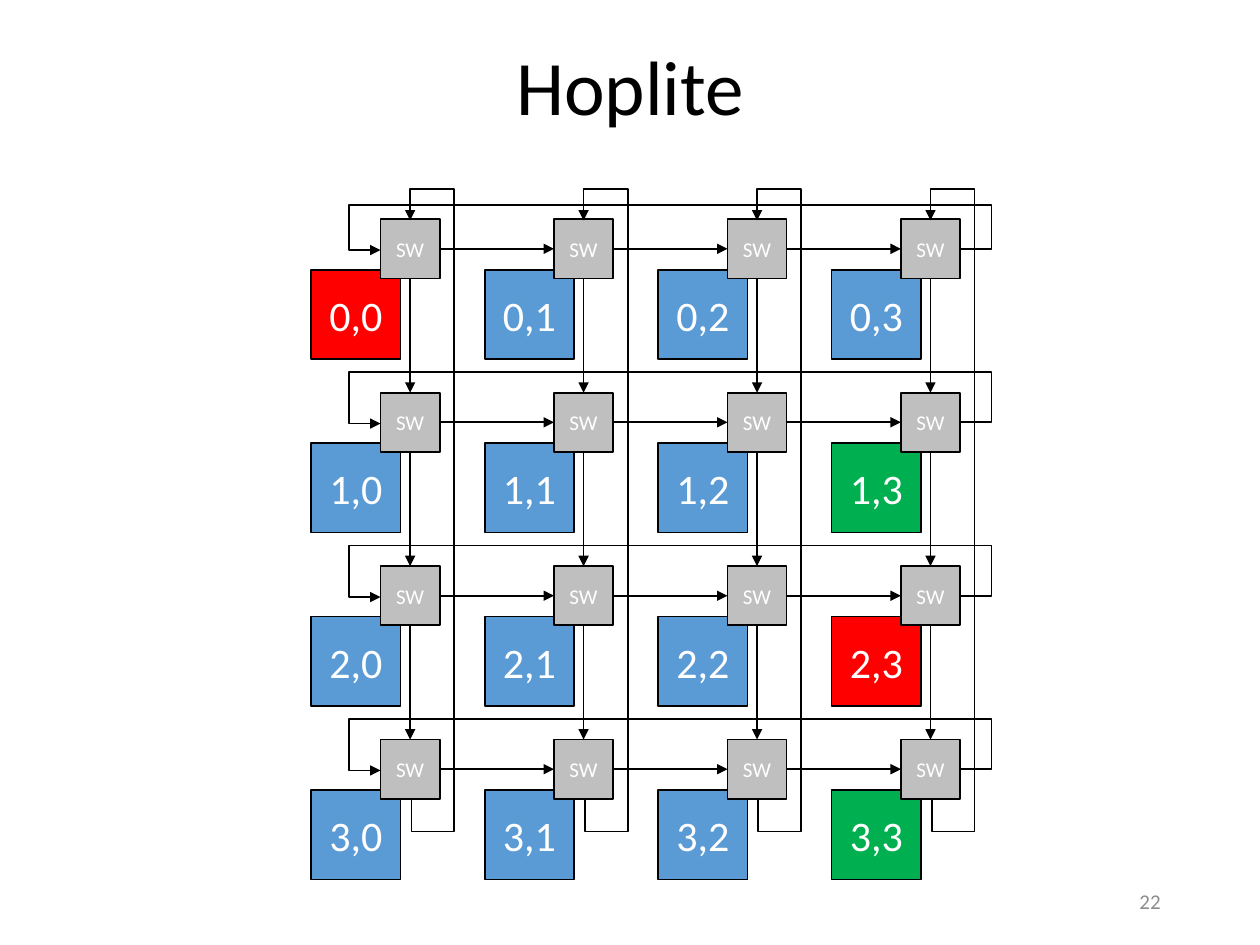
import pptx
import pptx.util
import pptx.dml.color
import pptx.enum.shapes
import pptx.enum.text
import pptx.oxml.ns
import lxml.etree

Inches = pptx.util.Inches
COLORS = {
    "black": "000000", "white": "FFFFFF", "number": "8C8C8C",
    "switch": "BFBFBF", "tile": "5B9BD5", "red": "FF0000", "green": "00B050",
}
ALIGN = pptx.enum.text.PP_ALIGN
RECTANGLE = pptx.enum.shapes.MSO_SHAPE.RECTANGLE
STRAIGHT = pptx.enum.shapes.MSO_CONNECTOR.STRAIGHT
TOP, LEFT, BOTTOM, RIGHT = range(4)


def write(shape, text, size, color, align=ALIGN.CENTER):
    frame = shape.text_frame
    frame.text = text
    frame.word_wrap = True
    frame.vertical_anchor = pptx.enum.text.MSO_ANCHOR.MIDDLE
    paragraph = frame.paragraphs[0]
    paragraph.alignment = align
    font = paragraph.runs[0].font
    font.name = "Calibri"
    font.size = pptx.util.Pt(size)
    font.color.rgb = pptx.dml.color.RGBColor.from_string(COLORS[color])


def outline(shape, arrow=False):
    shape.line.color.rgb = pptx.dml.color.RGBColor.from_string(COLORS["black"])
    shape.line.width = pptx.util.Pt(1)
    if arrow:
        qn = pptx.oxml.ns.qn
        lxml.etree.SubElement(shape.line._get_or_add_ln(), qn("a:tailEnd"), type="triangle")
        properties = shape._element.spPr
        if properties.find(qn("a:effectLst")) is None:
            lxml.etree.SubElement(properties, qn("a:effectLst"))


deck = pptx.Presentation()
deck.slide_width, deck.slide_height = Inches(10), Inches(7.5)
slide = deck.slides.add_slide(deck.slide_layouts[6])
shapes = slide.shapes

# Title and slide number
title = shapes.add_textbox(0, Inches(-0.01), Inches(10), Inches(1.45))
write(title, "Hoplite", 44, "black")
title.text_frame.paragraphs[0].line_spacing = 0.9
number = shapes.add_textbox(Inches(7.06), Inches(6.95), Inches(2.25), Inches(0.4))
write(number, "22", 12, "number", ALIGN.RIGHT)

# Tiles, then the switches over their corners
COUNT = 4
PITCH = 4.13 / 3
SWITCH_SIZE = 0.47
special = {(0, 0): "red", (2, 3): "red", (1, 3): "green", (3, 3): "green"}
cells = [(row, col) for row in range(COUNT) for col in range(COUNT)]
boxes = [(2.47, 2.14, 0.71, f"{row},{col}", 24, special.get((row, col), "tile"), row, col)
         for row, col in cells]
boxes += [(3.02, 1.74, SWITCH_SIZE, "SW", 12, "switch", row, col) for row, col in cells]
switches = {}
for left, top, side, label, size, fill, row, col in boxes:
    box = shapes.add_shape(RECTANGLE, Inches(left + col * PITCH), Inches(top + row * PITCH),
                           Inches(side), Inches(side))
    box.shadow.inherit = False
    box.fill.solid()
    box.fill.fore_color.rgb = pptx.dml.color.RGBColor.from_string(COLORS[fill])
    outline(box)
    write(box, label, size, "white")
    if fill == "switch":
        switches[row, col] = box

# Links to the next switch on the right and below
for row, col in cells:
    for target, exit_side, entry_side in (((row, col + 1), RIGHT, LEFT),
                                          ((row + 1, col), BOTTOM, TOP)):
        if target in switches:
            link = shapes.add_connector(STRAIGHT, 0, 0, 0, 0)
            link.begin_connect(switches[row, col], exit_side)
            link.end_connect(switches[target], entry_side)
            outline(link, arrow=True)

# Wrap-around routes: each row back to its first switch, each column back to the top
routes = []
for row, rise in enumerate((0.35, 0.4, 0.4, 0.4)):
    y = 1.74 + SWITCH_SIZE / 2 + row * PITCH
    routes.append([(7.62, y), (7.87, y), (7.87, y - rise),
                   (2.77, y - rise), (2.77, y + 0.01), (3.02, y + 0.01)])
for col in range(COUNT):
    x = 3.02 + SWITCH_SIZE / 2 + col * PITCH
    routes.append([(x + 0.01, 6.35), (x + 0.01, 6.6), (x + 0.35, 6.6),
                   (x + 0.35, 1.5), (x, 1.5), (x, 1.75)])
for start, *bends in routes:
    builder = shapes.build_freeform(Inches(start[0]), Inches(start[1]))
    builder.add_line_segments([(Inches(x), Inches(y)) for x, y in bends], close=False)
    route = builder.convert_to_shape()
    route.shadow.inherit = False
    route.fill.background()
    outline(route, arrow=True)

deck.save("out.pptx")
